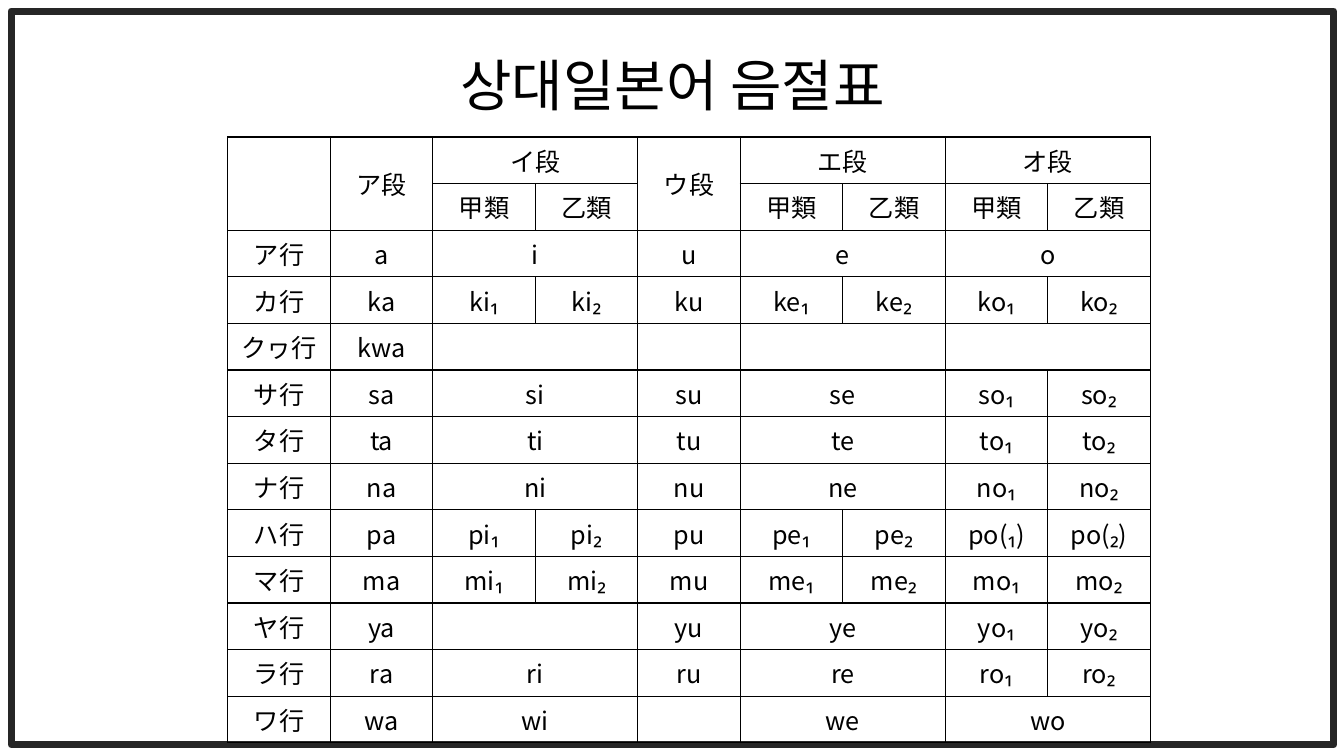
from pptx import Presentation
from pptx import util as u
from pptx.dml.color import RGBColor
from pptx.enum import shapes, text
from pptx.oxml import ns
from lxml import etree

FONT = "Noto Sans CJK KR"
BLACK = "000000"
KINDS = "甲類 乙類"

# First column and width in columns of each vowel group
GROUPS = [(0, 1), (1, 1), (2, 2), (4, 1), (5, 2), (7, 2)]

# One entry per group; a space separates the two kinds of a split group
SYLLABLES = [
    ["", "ア段", "イ段", "ウ段", "エ段", "オ段"],
    ["", "", KINDS, "", KINDS, KINDS],
    ["ア行", "a", "i", "u", "e", "o"],
    ["カ行", "ka", "ki₁ ki₂", "ku", "ke₁ ke₂", "ko₁ ko₂"],
    ["クヮ行", "kwa", "", "", "", ""],
    ["サ行", "sa", "si", "su", "se", "so₁ so₂"],
    ["タ行", "ta", "ti", "tu", "te", "to₁ to₂"],
    ["ナ行", "na", "ni", "nu", "ne", "no₁ no₂"],
    ["ハ行", "pa", "pi₁ pi₂", "pu", "pe₁ pe₂", "po(₁) po(₂)"],
    ["マ行", "ma", "mi₁ mi₂", "mu", "me₁ me₂", "mo₁ mo₂"],
    ["ヤ行", "ya", "", "yu", "ye", "yo₁ yo₂"],
    ["ラ行", "ra", "ri", "ru", "re", "ro₁ ro₂"],
    ["ワ行", "wa", "wi", "", "we", "wo"],
]


def color(value):
    return RGBColor.from_string(value)


def inches(box):
    return [u.Inches(length) for length in box]


def write(paragraph, words, size):
    paragraph.text = words
    paragraph.alignment = text.PP_ALIGN.CENTER
    font = paragraph.font
    font.size = u.Pt(size)
    font.name = FONT
    font.color.rgb = color(BLACK)
    # East Asian letters take their font from a separate element
    properties = paragraph._p.pPr.find(ns.qn("a:defRPr"))
    etree.SubElement(properties, ns.qn("a:ea"), typeface=FONT)


def add_frame(slide, box):
    frame = slide.shapes.add_shape(shapes.MSO_SHAPE.RECTANGLE, *inches(box))
    frame.shadow.inherit = False
    frame.fill.background()
    frame.line.color.rgb = color("262626")
    frame.line.width = u.Pt(5)


def add_title(slide, box, words):
    text_frame = slide.shapes.add_textbox(*inches(box)).text_frame
    text_frame.word_wrap = True
    text_frame.vertical_anchor = text.MSO_ANCHOR.MIDDLE
    paragraph = text_frame.paragraphs[0]
    paragraph.line_spacing = 0.9
    write(paragraph, words, 40)


def style_cell(cell):
    cell.vertical_anchor = text.MSO_ANCHOR.MIDDLE
    properties = cell._tc.get_or_add_tcPr()
    for side in ("a:lnL", "a:lnR", "a:lnT", "a:lnB"):
        line = etree.SubElement(properties, ns.qn(side), w=str(u.Pt(1)))
        fill = etree.SubElement(line, ns.qn("a:solidFill"))
        etree.SubElement(fill, ns.qn("a:srgbClr"), val=BLACK)
    cell.fill.background()


def add_syllable_table(slide, box):
    columns = sum(width for _, width in GROUPS)
    table = slide.shapes.add_table(len(SYLLABLES), columns, *inches(box)).table
    table.first_row = table.horz_banding = False
    for cell in table.iter_cells():
        style_cell(cell)

    for row, entries in enumerate(SYLLABLES):
        for (column, width), entry in zip(GROUPS, entries):
            parts = entry.split()
            for offset, part in enumerate(parts):
                cell = table.cell(row, column + offset)
                write(cell.text_frame.paragraphs[0], part, 18)
            if width == 2 and len(parts) < 2:
                table.cell(row, column).merge(table.cell(row, column + 1))

    # Single-column headings cover both heading rows
    for column, width in GROUPS:
        if width == 1:
            table.cell(0, column).merge(table.cell(1, column))


def main():
    presentation = Presentation()
    presentation.slide_width = u.Inches(13.33)
    presentation.slide_height = u.Inches(7.5)
    slide = presentation.slides.add_slide(presentation.slide_layouts[6])
    add_frame(slide, (0.11, 0.11, 13.12, 7.28))
    add_title(slide, (0.92, 0.4, 11.5, 0.96), "상대일본어 음절표")
    add_syllable_table(slide, (2.26, 1.36, 9.15, 6.01))
    presentation.save("out.pptx")


if __name__ == "__main__":
    main()
